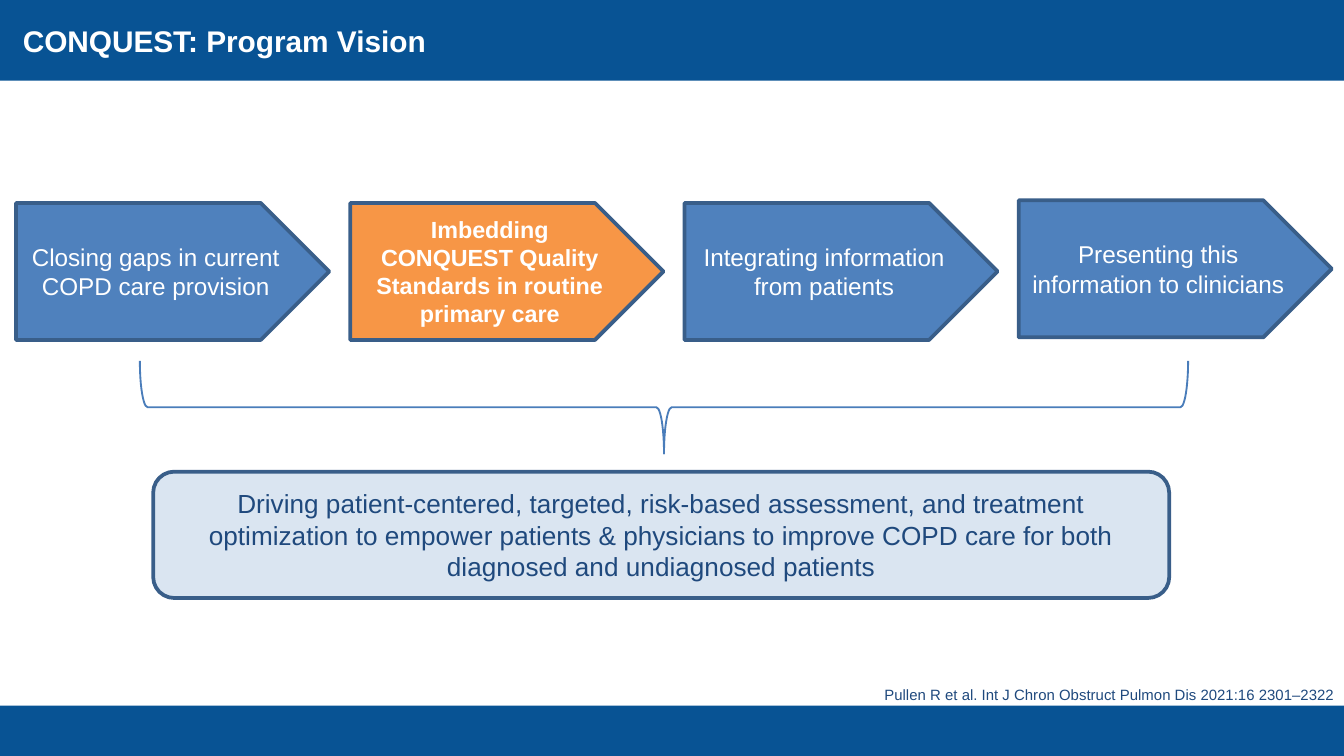
from pptx import Presentation
from pptx.dml.color import RGBColor
from pptx.enum.shapes import MSO_SHAPE
from pptx.enum.text import MSO_ANCHOR, PP_ALIGN
from pptx.util import Inches, Pt

# Content
TITLE = "CONQUEST: Program Vision"
STEPS = [  # text, highlighted
    ("Closing gaps in current COPD care provision", False),
    ("Imbedding CONQUEST Quality Standards in routine primary care", True),
    ("Integrating information from patients", False),
    ("Presenting this information to clinicians", False),
]
GOAL = ("Driving patient-centered, targeted, risk-based assessment, and treatment "
        "optimization to empower patients & physicians to improve COPD care for both "
        "diagnosed and undiagnosed patients")
CITATION = "Pullen R et al. Int J Chron Obstruct Pulmon Dis 2021:16 2301–2322"

# Colours
WHITE = RGBColor(0xFF, 0xFF, 0xFF)
BAND_BLUE = RGBColor(0x08, 0x53, 0x94)
STEP_BLUE = RGBColor(0x4F, 0x81, 0xBD)
ORANGE = RGBColor(0xF7, 0x96, 0x46)
OUTLINE = RGBColor(0x39, 0x5E, 0x89)
BRACE_BLUE = RGBColor(0x4A, 0x7D, 0xBA)
PALE_BLUE = RGBColor(0xDA, 0xE5, 0xF1)
NAVY = RGBColor(0x1F, 0x49, 0x7D)

# Layout, in inches
WIDTH = 10
HEIGHT = WIDTH * 9 / 16
FOOTER_TOP = 5.25
FIRST_STEP_LEFT, LAST_STEP_LEFT = 0.12, 7.58
STEP_TOP, STEP_W, STEP_H = 1.51, 2.33, 1.02
STEP_PITCH = (LAST_STEP_LEFT - FIRST_STEP_LEFT) / (len(STEPS) - 1)
LAST_STEP_RISE = 0.02
BRACE_CENTER_X, BRACE_CENTER_Y = 4.94, 3.03
BRACE_SPAN, BRACE_DEPTH = 7.8, 0.69

prs = Presentation()
prs.slide_width, prs.slide_height = Inches(WIDTH), Inches(HEIGHT)
slide = prs.slides.add_slide(prs.slide_layouts[6])


def add_part(kind, left, top, width, height, fill=None, line=None, line_width=2):
    part = slide.shapes.add_shape(kind, *map(Inches, (left, top, width, height)))
    part.shadow.inherit = False
    if fill is None:
        part.fill.background()
    else:
        part.fill.solid()
        part.fill.fore_color.rgb = fill
    if line is None:
        part.line.fill.background()
    else:
        part.line.color.rgb = line
        part.line.width = Pt(line_width)
    return part


def write(part, text, size, color, bold=False, align=PP_ALIGN.CENTER,
          anchor=MSO_ANCHOR.MIDDLE, inset=(0.1, 0.05)):
    frame = part.text_frame
    frame.word_wrap = True
    frame.vertical_anchor = anchor
    frame.margin_left = frame.margin_right = Inches(inset[0])
    frame.margin_top = frame.margin_bottom = Inches(inset[1])
    paragraph = frame.paragraphs[0]
    paragraph.text = text
    paragraph.alignment = align
    font = paragraph.font
    font.name, font.size, font.bold = "Arial", Pt(size), bold
    font.color.rgb = color


# Header and footer bands
add_part(MSO_SHAPE.RECTANGLE, 0, 0, WIDTH, 0.6, BAND_BLUE)
title = slide.shapes.add_textbox(*map(Inches, (0.1, 0.1, 8.8, 0.42)))
write(title, TITLE, 16, WHITE, True, PP_ALIGN.LEFT, MSO_ANCHOR.TOP, (0.07, 0.07))
add_part(MSO_SHAPE.RECTANGLE, 0, FOOTER_TOP, WIDTH, HEIGHT - FOOTER_TOP, BAND_BLUE)

# Row of steps
for column, (text, highlighted) in enumerate(STEPS):
    top = STEP_TOP - (LAST_STEP_RISE if column == len(STEPS) - 1 else 0)
    step = add_part(MSO_SHAPE.PENTAGON, FIRST_STEP_LEFT + column * STEP_PITCH, top,
                    STEP_W, STEP_H, ORANGE if highlighted else STEP_BLUE, OUTLINE)
    write(step, text, 12.5 if highlighted else 13, WHITE, highlighted)

# Brace, turned to point down at the goal
brace = add_part(MSO_SHAPE.RIGHT_BRACE, BRACE_CENTER_X - BRACE_DEPTH / 2,
                 BRACE_CENTER_Y - BRACE_SPAN / 2,
                 BRACE_DEPTH, BRACE_SPAN, line=BRACE_BLUE, line_width=1)
brace.rotation = 90

# Goal
goal = add_part(MSO_SHAPE.ROUNDED_RECTANGLE, 1.14, 3.51, 7.56, 0.94, PALE_BLUE, OUTLINE)
write(goal, GOAL, 14, NAVY)

# Citation
citation = slide.shapes.add_textbox(*map(Inches, (5.74, 5.05, 4.29, 0.24)))
write(citation, CITATION, 8, NAVY, align=PP_ALIGN.RIGHT, anchor=MSO_ANCHOR.TOP)

prs.save("out.pptx")
